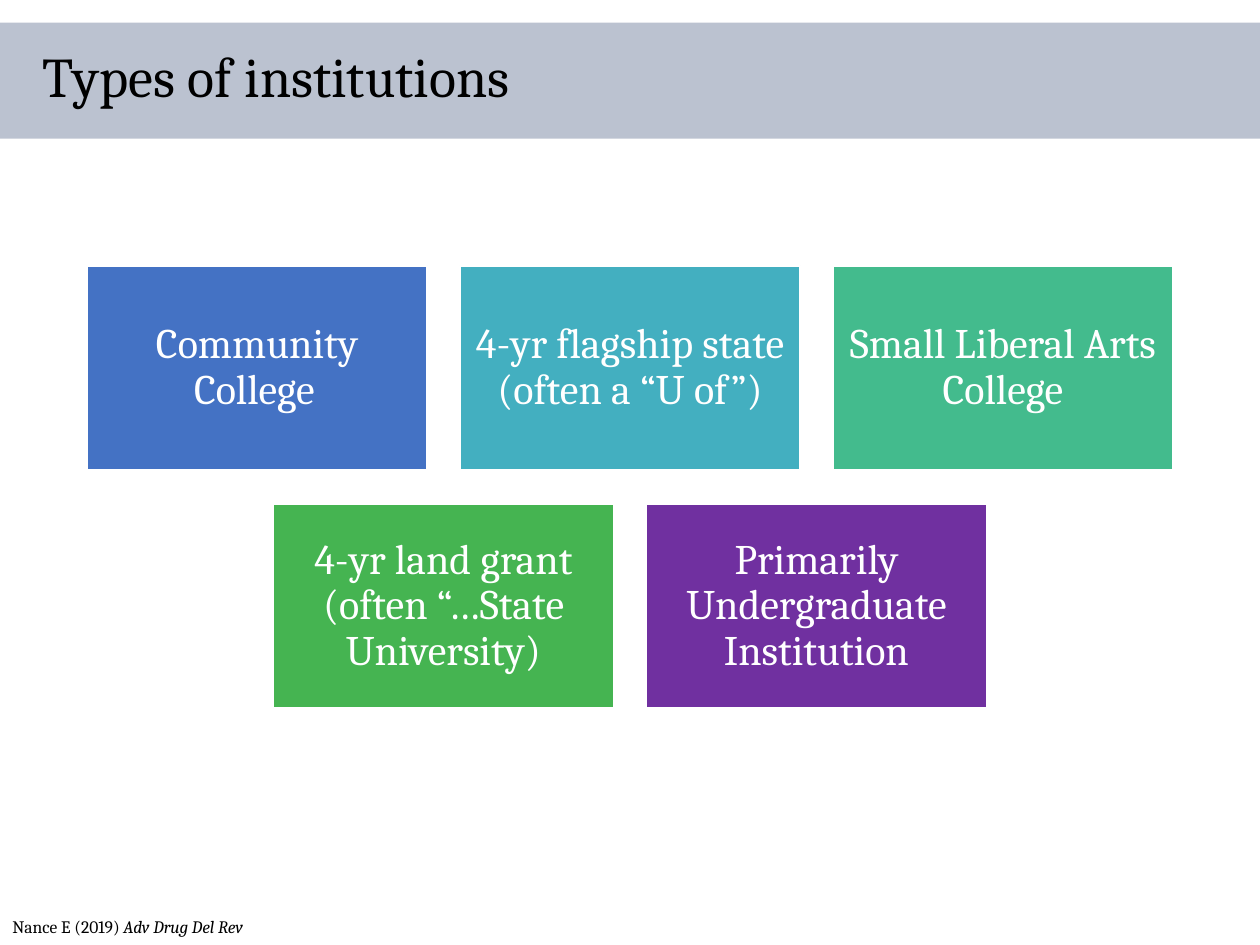
from dataclasses import dataclass

from lxml.etree import SubElement
from pptx import Presentation
from pptx.dml.color import RGBColor as Rgb
from pptx.enum.shapes import MSO_SHAPE as Shape
from pptx.enum.text import MSO_ANCHOR as Anchor, MSO_AUTO_SIZE as AutoSize, PP_ALIGN as Align
from pptx.oxml.ns import qn
from pptx.util import Inches, Pt


@dataclass(frozen=True)
class Theme:
    font: str = "Cambria"
    dark: str = "000000"
    light: str = "FFFFFF"
    band: str = "203864"
    band_opacity: int = 30
    title_size: int = 32
    card_size: int = 24
    source_size: int = 10


THEME = Theme()
SLIDE_WIDTH = 10
CARD_WIDTH, CARD_HEIGHT = 2.7, 1.62
COLUMN_GAP, ROW_GAP = 0.26, 0.27
CARDS_TOP = 2.11

# Each row is centred on the slide
CARD_ROWS = [
    [
        ("Community College\t", "4472C4"),
        ("4-yr flagship state (often a “U of”)", "43AFC0"),
        ("Small Liberal Arts College", "43BB8D"),
    ],
    [
        ("4-yr land grant (often “…State University)", "45B451"),
        ("Primarily Undergraduate Institution", "7030A0"),
    ],
]


def add_span(para, text, size, color, italic=None):
    span = para.add_run()
    span.text = text
    span.font.name = THEME.font
    span.font.size = Pt(size)
    span.font.italic = italic
    span.font.color.rgb = Rgb.from_string(color)


def add_rectangle(shapes, left, top, width, height, color):
    box = shapes.add_shape(
        Shape.RECTANGLE, Inches(left), Inches(top), Inches(width), Inches(height)
    )
    box.shadow.inherit = False
    box.fill.solid()
    box.fill.fore_color.rgb = Rgb.from_string(color)
    return box


def add_title_band(page):
    band = add_rectangle(page.shapes, 0, 0.18, SLIDE_WIDTH, 0.92, THEME.band)
    band.line.fill.background()
    color = band.fill._xPr.find(".//" + qn("a:srgbClr"))
    SubElement(color, qn("a:alpha"), val=str(THEME.band_opacity * 1000))
    # Send the band behind the title
    page.shapes._spTree.insert(2, band._element)


def set_title(page, text):
    title = page.shapes.title
    title.left, title.top = Inches(0.24), Inches(0.18)
    title.width, title.height = Inches(9.76), Inches(0.9)
    frame = title.text_frame
    frame.vertical_anchor = Anchor.MIDDLE
    para = frame.paragraphs[0]
    para.alignment = Align.LEFT
    para.line_spacing = 0.9
    add_span(para, text, THEME.title_size, THEME.dark)


def add_card(group, left, top, text, color):
    card = add_rectangle(group.shapes, left, top, CARD_WIDTH, CARD_HEIGHT, color)
    card.line.color.rgb = Rgb.from_string(THEME.light)
    card.line.width = Pt(1)
    frame = card.text_frame
    frame.word_wrap = True
    frame.vertical_anchor = Anchor.MIDDLE
    frame.margin_left = frame.margin_right = Inches(0.1)
    frame.margin_top = frame.margin_bottom = Inches(0.1)
    para = frame.paragraphs[0]
    para.alignment = Align.CENTER
    para.line_spacing = 0.9
    add_span(para, text, THEME.card_size, THEME.light)


def add_cards(page):
    group = page.shapes.add_group_shape()
    for row, cards in enumerate(CARD_ROWS):
        row_width = len(cards) * (CARD_WIDTH + COLUMN_GAP) - COLUMN_GAP
        row_left = (SLIDE_WIDTH - row_width) / 2
        top = CARDS_TOP + row * (CARD_HEIGHT + ROW_GAP)
        for column, (text, color) in enumerate(cards):
            left = row_left + column * (CARD_WIDTH + COLUMN_GAP)
            add_card(group, left, top, text, color)


def add_source(page, author, journal):
    box = page.shapes.add_textbox(Inches(0), Inches(7.22), Inches(3.27), Inches(0.27))
    frame = box.text_frame
    frame.word_wrap = True
    frame.auto_size = AutoSize.SHAPE_TO_FIT_TEXT
    para = frame.paragraphs[0]
    add_span(para, author, THEME.source_size, THEME.dark)
    add_span(para, journal, THEME.source_size, THEME.dark, italic=True)


def main():
    deck = Presentation()
    deck.slide_width, deck.slide_height = Inches(SLIDE_WIDTH), Inches(7.5)
    page = deck.slides.add_slide(deck.slide_layouts[5])

    # Heading
    add_title_band(page)
    set_title(page, "Types of institutions")

    # Institution types
    add_cards(page)

    # Citation
    add_source(page, "Nance E (2019) ", "Adv Drug Del Rev")

    deck.save("out.pptx")


if __name__ == "__main__":
    main()
